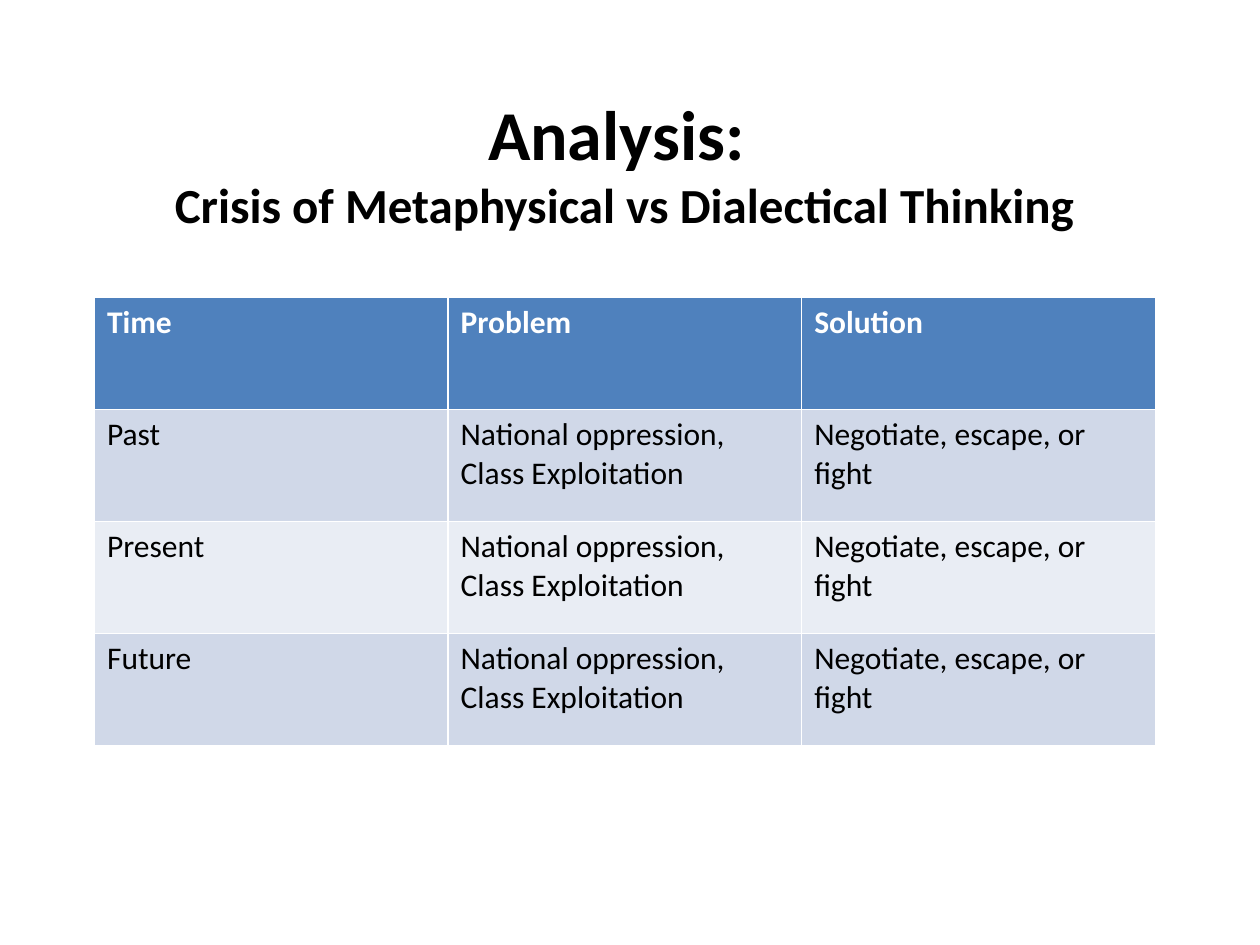
from pptx import Presentation
from pptx.dml.color import RGBColor
from pptx.enum.text import MSO_AUTO_SIZE, PP_ALIGN
from pptx.util import Inches, Pt


def style(p, size, color, bold):
    p.font.name = "Calibri"
    p.font.size = Pt(size)
    p.font.bold = bold
    p.font.color.rgb = rgb(color)


def rgb(color):
    return RGBColor.from_string(color)


prs = Presentation()
prs.slide_width, prs.slide_height = Inches(10), Inches(7.5)
s = prs.slides.add_slide(prs.slide_layouts[6])

problem = "National oppression, Class Exploitation"
solution = "Negotiate, escape, or fight"
rows = [("Time", "Problem", "Solution")]
rows += [(time, problem, solution) for time in ("Past", "Present", "Future")]
fills = ["4F81BD", "D0D8E8", "E9EDF4", "D0D8E8"]

table = s.shapes.add_table(
    len(rows), 3, Inches(0.75), Inches(2.36), Inches(8.42), Inches(3.56)
).table
for i, (row, fill) in enumerate(zip(rows, fills)):
    for j, text in enumerate(row):
        cell = table.cell(i, j)
        cell.text = text
        cell.fill.solid()
        cell.fill.fore_color.rgb = rgb(fill)
        style(cell.text_frame.paragraphs[0], 18, "FFFFFF" if i == 0 else "000000", i == 0)

title = s.shapes.add_textbox(Inches(1.24), Inches(0.67), Inches(7.43), Inches(1.25))
tf = title.text_frame
tf.word_wrap = False
tf.auto_size = MSO_AUTO_SIZE.SHAPE_TO_FIT_TEXT
tf.text = "Analysis: \nCrisis of Metaphysical vs Dialectical Thinking"
for p, size in zip(tf.paragraphs, (40, 28)):
    p.alignment = PP_ALIGN.CENTER
    style(p, size, "000000", True)

prs.save("out.pptx")
